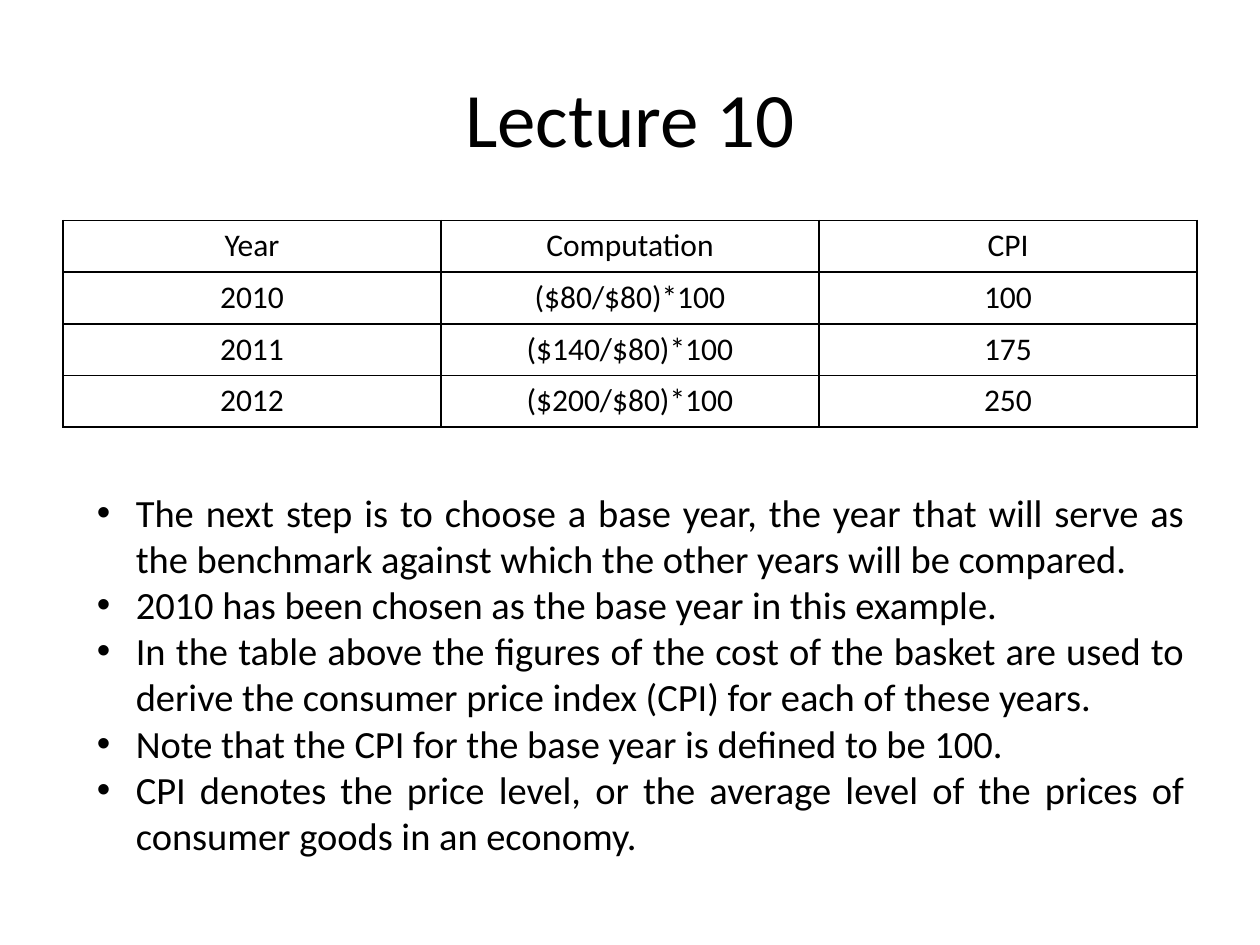
from dataclasses import dataclass

from lxml.etree import SubElement
from pptx import Presentation
from pptx.dml.color import RGBColor
from pptx.enum.text import MSO_ANCHOR as Anchor, PP_ALIGN as Align
from pptx.oxml import parse_xml
from pptx.oxml.ns import nsdecls, qn
from pptx.slide import Slide
from pptx.util import Inches, Pt

ROWS = [
    ("Year", "Computation", "CPI"),
    ("2010", "($80/$80)*100", "100"),
    ("2011", "($140/$80)*100", "175"),
    ("2012", "($200/$80)*100", "250"),
]
POINTS = [
    "The next step is to choose a base year, the year that will serve as the "
    "benchmark against which the other years will be compared.",
    "2010 has been chosen as the base year in this example.",
    "In the table above the figures of the cost of the basket are used to "
    "derive the consumer price index (CPI) for each of these years.",
    "Note that the CPI for the base year is defined to be 100.",
    "CPI denotes the price level, or the average level of the prices of "
    "consumer goods in an economy.",
]


def color(value):
    return RGBColor.from_string(value)


@dataclass
class Deck:
    """Holds the style and the current slide."""

    s: Slide
    font: str = "Calibri"
    ink: str = "000000"
    paper: str = "FFFFFF"

    def set_text(self, p, text, size, align):
        p.text = text
        p.alignment = align
        p.font.name = self.font
        p.font.size = Pt(size)
        p.font.color.rgb = color(self.ink)

    def box(self, x, y, w, h, anchor):
        sp = self.s.shapes.add_textbox(Inches(x), Inches(y), Inches(w), Inches(h))
        tf = sp.text_frame
        tf.word_wrap = True
        tf.vertical_anchor = anchor
        return tf

    def title(self, text, x, y, w, h):
        tf = self.box(x, y, w, h, Anchor.MIDDLE)
        self.set_text(tf.paragraphs[0], text, 44, Align.CENTER)

    def bullets(self, items, x, y, w, h, indent=0.31):
        tf = self.box(x, y, w, h, Anchor.TOP)
        for i, text in enumerate(items):
            p = tf.add_paragraph() if i else tf.paragraphs[0]
            self.set_text(p, text, 22, Align.JUSTIFY)
            pPr = p._p.get_or_add_pPr()
            pPr.set("marL", str(Inches(indent)))
            pPr.set("indent", str(-Inches(indent)))
            bullet_font = parse_xml(f'<a:buFont {nsdecls("a")} typeface="Arial"/>')
            pPr.insert_element_before(bullet_font, "a:defRPr")
            bullet = parse_xml(f'<a:buChar {nsdecls("a")} char="•"/>')
            pPr.insert_element_before(bullet, "a:defRPr")

    def borders(self, cell):
        tcPr = cell._tc.get_or_add_tcPr()
        for i, side in enumerate("LRTB"):
            ln = SubElement(tcPr, qn(f"a:ln{side}"), w=str(Pt(1)))
            fill = SubElement(ln, qn("a:solidFill"))
            SubElement(fill, qn("a:srgbClr"), val=self.ink)
            tcPr.insert(i, ln)

    def table(self, rows, x, y, w, row_h):
        frame = self.s.shapes.add_table(
            len(rows), len(rows[0]), Inches(x), Inches(y),
            Inches(w), Inches(row_h * len(rows)))
        table = frame.table
        table.first_row = table.horz_banding = False
        for r, row in enumerate(rows):
            for c, text in enumerate(row):
                cell = table.cell(r, c)
                cell.fill.solid()
                cell.fill.fore_color.rgb = color(self.paper)
                self.borders(cell)
                self.set_text(cell.text_frame.paragraphs[0], text, 18, Align.CENTER)


def main():
    prs = Presentation()
    prs.slide_width, prs.slide_height = Inches(10), Inches(7.5)
    deck = Deck(prs.slides.add_slide(prs.slide_layouts[6]))
    deck.title("Lecture 10", 0.5, 0.3, 9, 1.25)
    deck.table(ROWS, 0.5, 1.75, 9, 0.41)
    deck.bullets(POINTS, 0.67, 3.83, 8.83, 3.87)
    prs.save("out.pptx")


if __name__ == "__main__":
    main()
